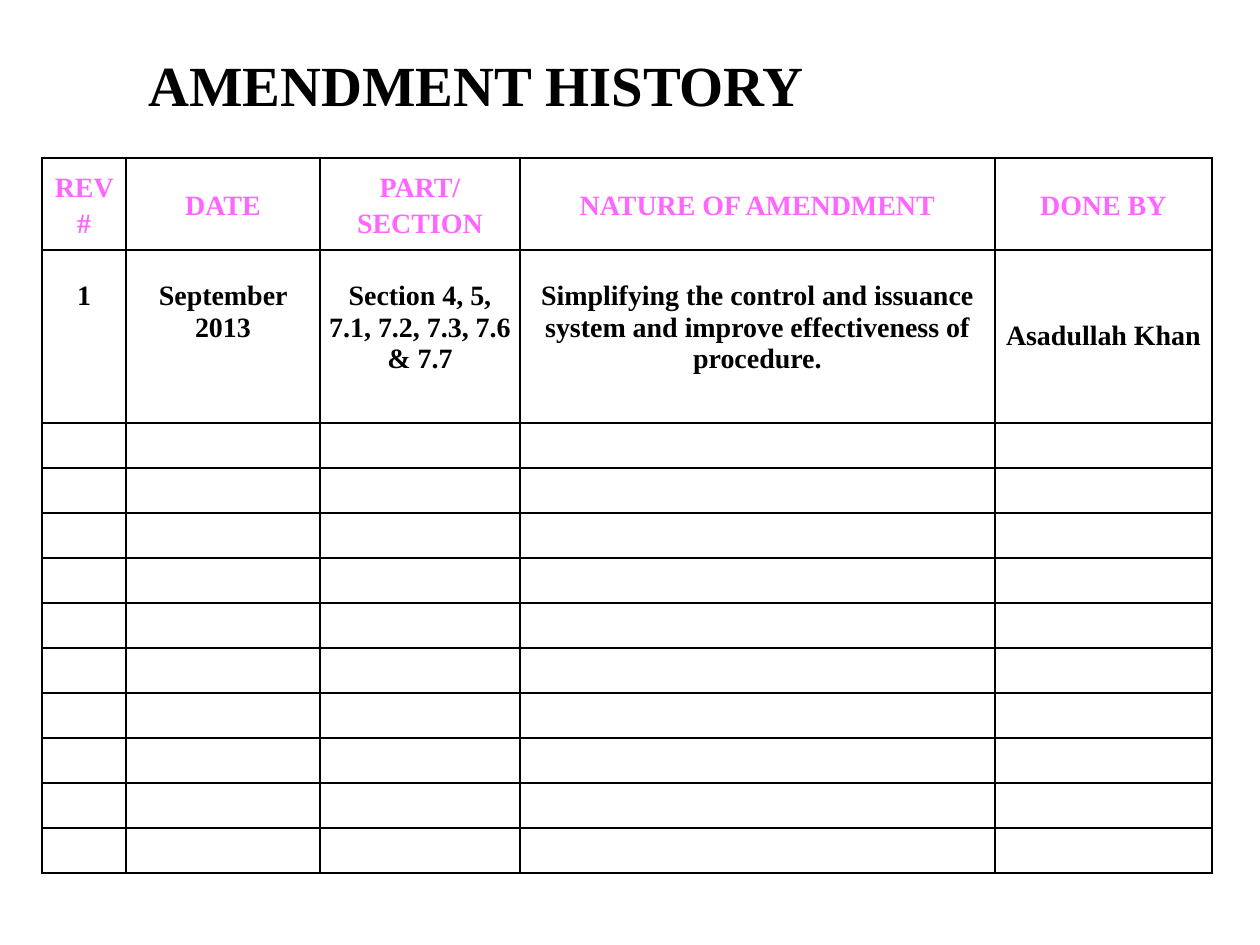
from dataclasses import dataclass

from lxml.etree import SubElement
from pptx import Presentation
from pptx.dml.color import RGBColor
from pptx.enum.text import MSO_ANCHOR, PP_ALIGN
from pptx.oxml.ns import qn
from pptx.util import Pt

TITLE = "AMENDMENT HISTORY"
HEADINGS = ("REV #", "DATE", "PART/ SECTION", "NATURE OF AMENDMENT", "DONE BY")
AMENDMENT = (
    "1",
    "September 2013",
    "Section 4, 5, 7.1, 7.2, 7.3, 7.6 & 7.7",
    "Simplifying the control and issuance system and improve effectiveness of procedure.",
    "Asadullah Khan",
)
BLANK_ROWS = 10
COLUMN_WIDTHS = (84, 194, 200, 475, 217)
ROW_HEIGHTS = (92, 173) + (45,) * BLANK_ROWS
TABLE_LEFT, TABLE_TOP = 42, 158
TITLE_BOX = (136, 42, 850, 84)
SIDE_MARGIN, FIRST_LINE_DROP = 9, 31


@dataclass(frozen=True)
class Theme:
    font: str = "Times New Roman"
    ink: str = "000000"
    heading: str = "FF66FF"
    paper: str = "FFFFFF"
    title_size: float = 32.4
    body_size: float = 16
    border: float = 1.5


THEME = Theme()


def px(length):
    return length * 914400 // 126


def write(paragraph, wording, size, colour):
    run = paragraph.add_run()
    run.text = wording
    run.font.name = THEME.font
    run.font.size = Pt(size)
    run.font.bold = True
    run.font.color.rgb = RGBColor.from_string(colour)


def outline(cell):
    properties = cell._tc.get_or_add_tcPr()
    for position, side in enumerate(("lnL", "lnR", "lnT", "lnB")):
        line = SubElement(properties, qn(f"a:{side}"), w=str(Pt(THEME.border)))
        fill = SubElement(line, qn("a:solidFill"))
        SubElement(fill, qn("a:srgbClr"), val=THEME.ink)
        properties.insert(position, line)


def add_title(slide):
    frame = slide.shapes.add_textbox(*map(px, TITLE_BOX)).text_frame
    frame.word_wrap = True
    frame.vertical_anchor = MSO_ANCHOR.MIDDLE
    write(frame.paragraphs[0], TITLE, THEME.title_size, THEME.ink)


def add_history(slide):
    history = slide.shapes.add_table(
        len(ROW_HEIGHTS), len(COLUMN_WIDTHS), px(TABLE_LEFT), px(TABLE_TOP),
        px(sum(COLUMN_WIDTHS)), px(sum(ROW_HEIGHTS)),
    ).table
    history.first_row = history.horz_banding = False
    for column, width in zip(history.columns, COLUMN_WIDTHS):
        column.width = px(width)
    for row, height in zip(history.rows, ROW_HEIGHTS):
        row.height = px(height)

    for cell in history.iter_cells():
        cell.fill.solid()
        cell.fill.fore_color.rgb = RGBColor.from_string(THEME.paper)
        cell.margin_left = cell.margin_right = px(SIDE_MARGIN)
        cell.margin_top = cell.margin_bottom = 0
        outline(cell)

    last = len(HEADINGS) - 1
    for index, (heading, entry) in enumerate(zip(HEADINGS, AMENDMENT)):
        heading_cell, entry_cell = history.cell(0, index), history.cell(1, index)
        heading_cell.vertical_anchor = MSO_ANCHOR.MIDDLE
        if index == last:
            entry_cell.vertical_anchor = MSO_ANCHOR.MIDDLE
        else:
            entry_cell.margin_top = px(FIRST_LINE_DROP)
        for cell, wording, colour in (
            (heading_cell, heading, THEME.heading),
            (entry_cell, entry, THEME.ink),
        ):
            paragraph = cell.text_frame.paragraphs[0]
            paragraph.alignment = PP_ALIGN.CENTER
            write(paragraph, wording, THEME.body_size, colour)
        heading_paragraph = heading_cell.text_frame.paragraphs[0]
        heading_paragraph.line_spacing = 1.15
        heading_paragraph.space_after = Pt(10)


def main():
    deck = Presentation()
    deck.slide_width, deck.slide_height = px(1260), px(945)
    slide = deck.slides.add_slide(deck.slide_layouts[6])
    add_title(slide)
    add_history(slide)
    deck.save("out.pptx")


if __name__ == "__main__":
    main()
